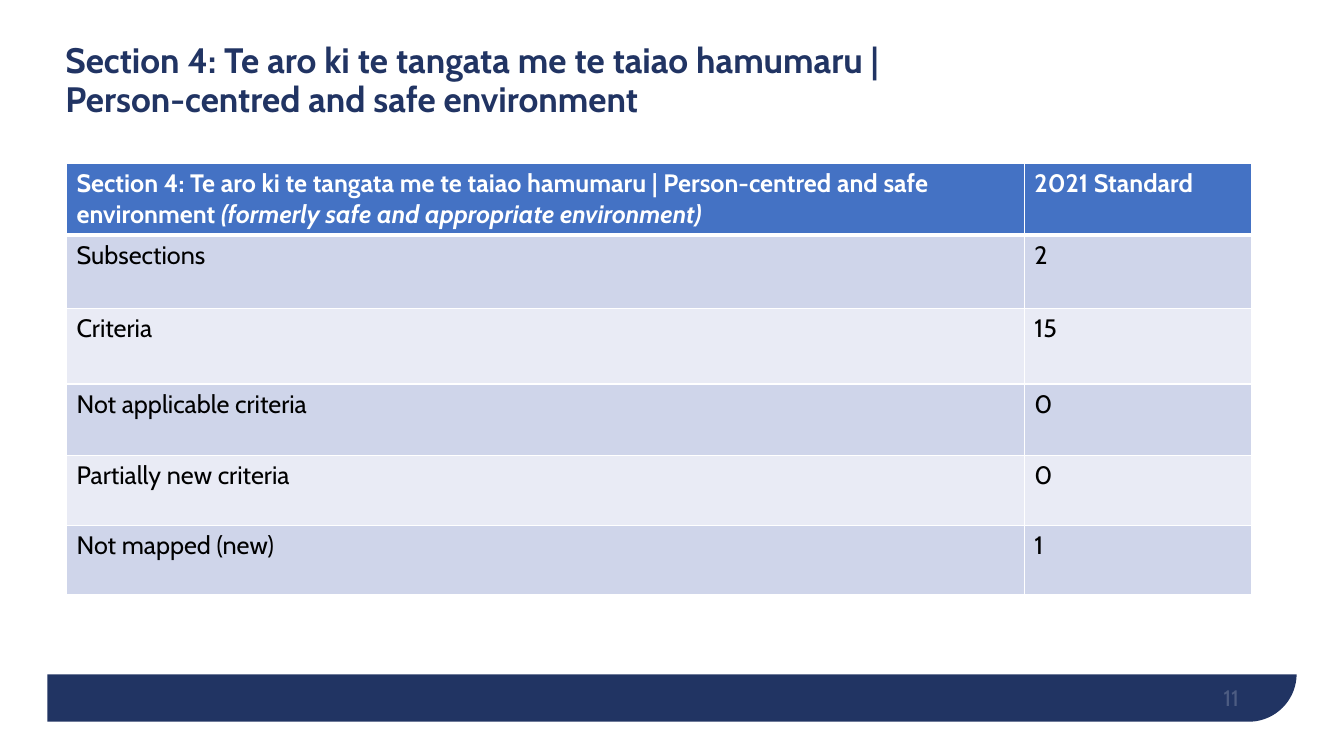
from lxml import etree
from pptx import Presentation
from pptx import util as u
from pptx.dml.color import RGBColor
from pptx.enum import shapes, text
from pptx.oxml import ns

NAVY = RGBColor(0x21, 0x34, 0x63)
BLUE = RGBColor(0x44, 0x72, 0xC4)
BAND = RGBColor(0xCF, 0xD5, 0xEA)
PALE = RGBColor(0xE9, 0xEB, 0xF5)
WHITE = RGBColor(0xFF, 0xFF, 0xFF)
BLACK = RGBColor(0, 0, 0)

HEAD = "Section 4: Te aro ki te tangata me te taiao hamumaru | Person-centred and safe environment"
ROWS = [
    ("Subsections", "2"),
    ("Criteria", "15"),
    ("Not applicable criteria", "0"),
    ("Partially new criteria", "0"),
    ("Not mapped (new)", "1"),
]
WIDTHS = [9.5, 2.25]
HEIGHTS = [0.71, 0.73, 0.75, 0.71, 0.69, 0.69]


def put(item, **vals):
    for key, val in vals.items():
        setattr(item, key, val)


class Page:
    face = "Cabin"

    def __init__(self, deck):
        self.slide = deck.slides.add_slide(deck.slide_layouts[6])

    def shape(self, kind, box, color):
        item = self.slide.shapes.add_shape(kind, *map(u.Inches, box))
        item.shadow.inherit = False
        item.fill.solid()
        item.fill.fore_color.rgb = color
        item.line.fill.background()
        return item

    def run(self, par, words, size, color, **style):
        run = par.add_run()
        run.text = words
        put(run.font, name=self.face, size=u.Pt(size), **style)
        run.font.color.rgb = color
        return run

    def label(self, box, words, size, color, frame, par, **style):
        item = self.slide.shapes.add_textbox(*map(u.Inches, box))
        body = item.text_frame
        put(body, word_wrap=True, **frame)
        put(body.paragraphs[0], **par)
        return self.run(body.paragraphs[0], words, size, color, **style)

    def edge(self, cell, side, width):
        props = cell._tc.get_or_add_tcPr()
        line = etree.Element(ns.qn("a:ln" + side), w=str(u.Pt(width)))
        fill = etree.SubElement(line, ns.qn("a:solidFill"))
        etree.SubElement(fill, ns.qn("a:srgbClr"), val=str(WHITE))
        props.insert("LRTB".index(side), line)

    def cell(self, cell, parts, color, fill, base):
        for words, style in parts:
            self.run(cell.text_frame.paragraphs[0], words, 18, color, **style)
        cell.fill.solid()
        cell.fill.fore_color.rgb = fill
        for side, width in zip("LRTB", base):
            self.edge(cell, side, width)

    def table(self, left, top, widths, heights, head, rows):
        box = map(u.Inches, (left, top, sum(widths), sum(heights)))
        grid = self.slide.shapes.add_table(len(heights), len(widths), *box).table
        for col, width in zip(grid.columns, widths):
            col.width = u.Inches(width)
        for row, height in zip(grid.rows, heights):
            row.height = u.Inches(height)
        for c, parts in enumerate(head):
            self.cell(grid.cell(0, c), parts, WHITE, BLUE, (1, 1, 1, 3))
        for r, row in enumerate(rows, 1):
            fill = BAND if r % 2 else PALE
            top_line = 3 if r == 1 else 1
            for c, words in enumerate(row):
                self.cell(grid.cell(r, c), [(words, {"bold": False})],
                          BLACK, fill, (1, 1, top_line, 1))


def main():
    deck = Presentation()
    put(deck, slide_width=u.Inches(13.33), slide_height=u.Inches(7.5))
    page = Page(deck)

    # Footer: a navy panel with one round corner, covered down to a strip
    kind = shapes.MSO_SHAPE
    panel = page.shape(kind.ROUND_1_RECTANGLE, (0.47, 0.37, 12.39, 6.79), NAVY)
    panel.adjustments[0] = 0.07
    panel.rotation = 180
    panel._element.spPr.xfrm.set("flipH", "1")
    page.shape(kind.RECTANGLE, (0, 0, 13.33, 6.69), WHITE)

    # Page number, mostly see-through
    flush = dict.fromkeys(
        ("margin_left", "margin_top", "margin_right", "margin_bottom"), 0)
    num = page.label((9.29, 6.65, 3, 0.4), "11", 16, WHITE,
                     {"vertical_anchor": text.MSO_ANCHOR.BOTTOM, **flush},
                     {"alignment": text.PP_ALIGN.RIGHT})
    tint = num._r.find(".//" + ns.qn("a:srgbClr"))
    etree.SubElement(tint, ns.qn("a:alpha"), val="20000")

    # Title
    page.label((0.55, 0.36, 9, 0.9), HEAD, 25.2, NAVY,
               {"vertical_anchor": text.MSO_ANCHOR.MIDDLE},
               {"line_spacing": 0.9}, bold=True)

    # Summary table
    bold = {"bold": True}
    head = [
        [(HEAD + " ", bold),
         ("(formerly safe and appropriate environment)", {**bold, "italic": True})],
        [("2021 Standard", bold)],
    ]
    page.table(0.66, 1.62, WIDTHS, HEIGHTS, head, ROWS)

    deck.save("out.pptx")


if __name__ == "__main__":
    main()
